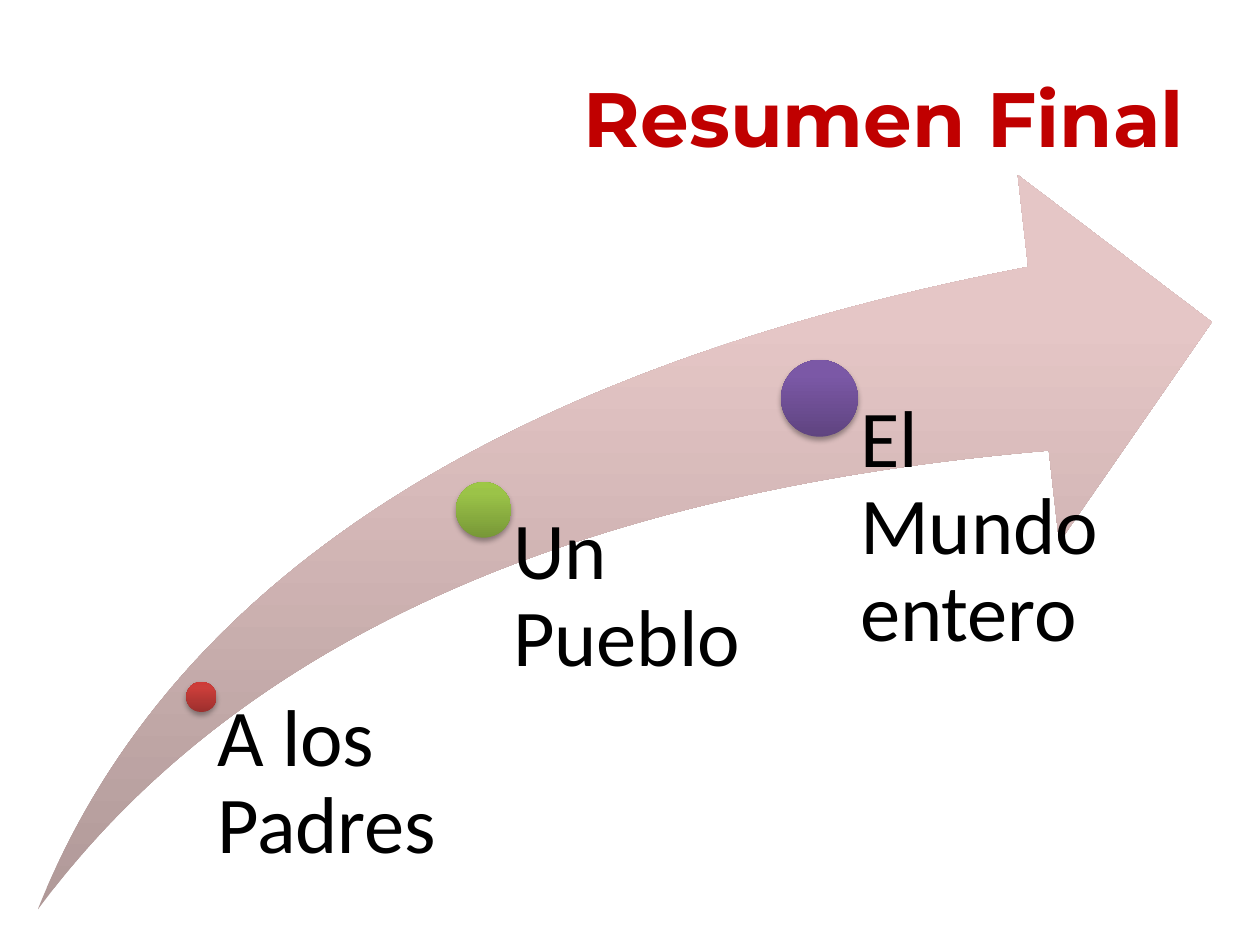
import copy
from dataclasses import dataclass

import pptx
import pptx.dml.color
import pptx.enum.shapes
import pptx.enum.text
import pptx.oxml
import pptx.oxml.ns
import pptx.util
from pptx.util import Cm

SHAPES = pptx.enum.shapes.MSO_SHAPE


@dataclass(frozen=True)
class Theme:
    title_color: str = "C00000"
    title_font: str = "Montserrat"
    title_size: int = 44
    label_color: str = "000000"
    label_font: str = "Calibri"
    label_size: int = 46
    arrow: tuple = ("B09998", "E5C6C6", "E6C7C6")
    red: tuple = ("9C2F2D", "CB3E3A", "CE3B37")
    green: tuple = ("779737", "9BC348", "9DC746")
    purple: tuple = ("5F4480", "7B58A6", "7C57A8")


@dataclass(frozen=True)
class Milestone:
    """A dot on the arrow, by its centre in cm, with the label below it."""
    label: str
    center_x: float
    center_y: float
    diameter: float
    label_width: float
    colors: tuple


THEME = Theme()
ARROW_LEFT, ARROW_TOP, ARROW_WIDTH, ARROW_HEIGHT = 0.76, 3.53, 23.67, 14.81
MILESTONES = [
    Milestone("A los Padres", 4.06, 14.05, 0.61, 5.51, THEME.red),
    Milestone("Un Pueblo", 9.75, 10.28, 1.12, 5.69, THEME.green),
    Milestone("El Mundo entero", 16.52, 8.03, 1.55, 5.69, THEME.purple),
]


def style_font(font, name: str, size: int, color: str) -> None:
    font.name = name
    font.size = pptx.util.Pt(size)
    font.color.rgb = pptx.dml.color.RGBColor.from_string(color)


def fill_upward(shape, colors: tuple) -> None:
    """Blend three colours from bottom to top, without outline or shadow."""
    shape.shadow.inherit = False
    shape.line.fill.background()
    shape.fill.gradient()
    shape.fill.gradient_angle = 90
    last_stop = shape._element.spPr.xpath("./a:gradFill/a:gsLst/a:gs")[-1]
    last_stop.addnext(copy.deepcopy(last_stop))
    for stop, position, color in zip(shape.fill.gradient_stops, (0, 0.8, 1), colors):
        stop.position = position
        stop.color.rgb = pptx.dml.color.RGBColor.from_string(color)


def add_soft_shadow(shape) -> None:
    effects = shape._element.spPr.find(pptx.oxml.ns.qn("a:effectLst"))
    effects.append(pptx.oxml.parse_xml(
        f'<a:outerShdw {pptx.oxml.ns.nsdecls("a")} blurRad="40000" dist="23000" '
        'dir="5400000" rotWithShape="0"><a:srgbClr val="000000">'
        '<a:alpha val="35000"/></a:srgbClr></a:outerShdw>'))


def add_title(slide, text: str) -> None:
    title = slide.shapes.title
    title.left, title.top, title.width, title.height = Cm(1.27), Cm(0.76), Cm(22.86), Cm(3.18)
    title.text_frame.text = text
    title.text_frame.vertical_anchor = pptx.enum.text.MSO_ANCHOR.MIDDLE
    para = title.text_frame.paragraphs[0]
    para.alignment = pptx.enum.text.PP_ALIGN.RIGHT
    font = para.runs[0].font
    style_font(font, THEME.title_font, THEME.title_size, THEME.title_color)
    font.bold = True


def add_arrow(slide) -> None:
    arrow = slide.shapes.add_shape(SHAPES.SWOOSH_ARROW, Cm(ARROW_LEFT), Cm(ARROW_TOP),
                                   Cm(ARROW_WIDTH), Cm(ARROW_HEIGHT))
    arrow.adjustments[0] = arrow.adjustments[1] = 0.25
    fill_upward(arrow, THEME.arrow)


def add_milestone(slide, milestone: Milestone) -> None:
    size = milestone.diameter
    dot = slide.shapes.add_shape(SHAPES.OVAL, Cm(milestone.center_x - size / 2),
                                 Cm(milestone.center_y - size / 2), Cm(size), Cm(size))
    fill_upward(dot, milestone.colors)
    add_soft_shadow(dot)

    label_height = ARROW_TOP + ARROW_HEIGHT - milestone.center_y
    box = slide.shapes.add_textbox(Cm(milestone.center_x), Cm(milestone.center_y),
                                   Cm(milestone.label_width), Cm(label_height))
    frame = box.text_frame
    frame.word_wrap = True
    frame.margin_left = Cm(size * 0.53)
    frame.margin_top = frame.margin_right = frame.margin_bottom = 0
    frame.text = milestone.label
    para = frame.paragraphs[0]
    para.line_spacing = 0.9
    style_font(para.runs[0].font, THEME.label_font, THEME.label_size, THEME.label_color)


def main() -> None:
    deck = pptx.Presentation()
    deck.slide_width, deck.slide_height = Cm(25.4), Cm(19.05)
    title_only = deck.slide_layouts[5]
    slide = deck.slides.add_slide(title_only)
    add_title(slide, "Resumen Final")
    add_arrow(slide)
    for milestone in MILESTONES:
        add_milestone(slide, milestone)
    deck.save("out.pptx")


if __name__ == "__main__":
    main()
